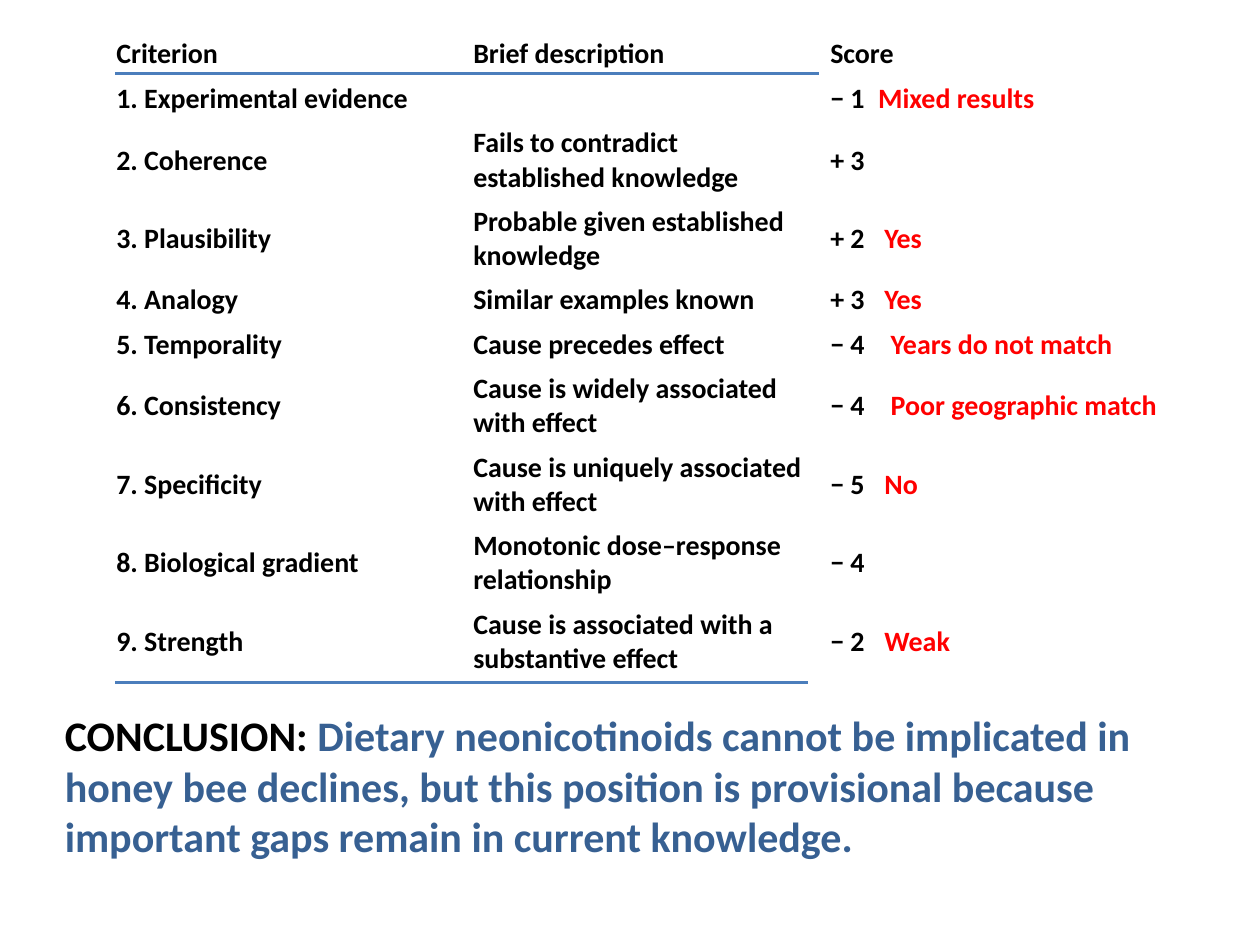
"""Build the scored criteria table with its conclusion."""
from typing import NamedTuple

from lxml import etree
from pptx import Presentation
from pptx import util as u
from pptx.dml.color import RGBColor
from pptx.enum import shapes, text
from pptx.oxml.ns import qn

BLACK = RGBColor(0x00, 0x00, 0x00)
RED = RGBColor(0xFF, 0x00, 0x00)
BLUE = RGBColor(0x37, 0x60, 0x92)
RULE = RGBColor(0x4B, 0x7E, 0xBC)
FONT = "Calibri"
GRID_COLS = 120
COL_SPAN = 34
ONE_LINE, TWO_LINES = u.Inches(0.34), u.Inches(0.6)


class Row(NamedTuple):
    name: str
    description: str
    score: str
    remark: str = ""
    tab: float = 0
    height: int = TWO_LINES


class Rule(NamedTuple):
    x1: int
    x2: int
    y: int
    width: float


ROWS = [
    Row("Criterion", "Brief description", "Score", height=ONE_LINE),
    Row("1. Experimental evidence", "", "− 1", "Mixed results", 0.38, ONE_LINE),
    Row("2. Coherence", "Fails to contradict established knowledge", "+ 3"),
    Row("3. Plausibility", "Probable given established knowledge", "+ 2", "Yes", 0.43),
    Row("4. Analogy", "Similar examples known", "+ 3", "Yes", 0.43, ONE_LINE),
    Row("5. Temporality", "Cause precedes effect", "− 4", "Years do not match", 0.48, ONE_LINE),
    Row("6. Consistency", "Cause is widely associated with effect", "− 4",
        "Poor geographic match", 0.48),
    Row("7. Specificity", "Cause is uniquely associated with effect", "− 5", "No", 0.43),
    Row("8. Biological gradient", "Monotonic dose–response relationship", "− 4"),
    Row("9. Strength", "Cause is associated with a substantive effect", "− 2", "Weak", 0.43),
]
RULES = [Rule(11, 78, 7, 2), Rule(11, 77, 65, 1.5)]

prs = Presentation()
prs.slide_width, prs.slide_height = u.Inches(10), u.Inches(7.5)


def grid(n: float) -> int:
    """Return the length of n grid units."""
    return round(prs.slide_width * n / GRID_COLS)


def add_text(p, content: str, *, size: float = 16, color: RGBColor = BLACK, bold: bool = True) -> None:
    """Append a formatted run to a paragraph."""
    r = p.add_run()
    r.text = content
    r.font.name, r.font.size, r.font.bold = FONT, u.Pt(size), bold
    r.font.color.rgb = color


def add_tab(p, inches: float) -> None:
    """Set one left tab stop on a paragraph."""
    tabs = etree.SubElement(p._p.get_or_add_pPr(), qn("a:tabLst"))
    etree.SubElement(tabs, qn("a:tab"), pos=str(u.Inches(inches)), algn="l")


def add_criteria(s, rows: list[Row]) -> None:
    """Draw the criteria table."""
    height = sum(row.height for row in rows)
    table = s.shapes.add_table(len(rows), 3, grid(10), grid(3), grid(3 * COL_SPAN), height).table
    table.first_row = table.horz_banding = False
    for col in table.columns:
        col.width = grid(COL_SPAN)
    for line, row in zip(table.rows, rows):
        line.height = row.height
        for cell, content in zip(line.cells, row[:3]):
            cell.fill.background()
            cell.vertical_anchor = text.MSO_ANCHOR.MIDDLE
            cell.margin_left = cell.margin_right = u.Inches(0.09)
            cell.margin_top = cell.margin_bottom = u.Inches(0.04)
            add_text(cell.text_frame.paragraphs[0], content)
        if row.remark:
            p = line.cells[2].text_frame.paragraphs[0]
            add_tab(p, row.tab)
            add_text(p, "\t" + row.remark, color=RED)


def add_rule(s, rule: Rule) -> None:
    """Draw one horizontal rule."""
    sp = s.shapes.add_connector(shapes.MSO_CONNECTOR.STRAIGHT, grid(rule.x1), grid(rule.y),
                                grid(rule.x2), grid(rule.y))
    sp.line.color.rgb, sp.line.width = RULE, u.Pt(rule.width)
    etree.SubElement(sp._element.spPr, qn("a:effectLst"))


def add_conclusion(s) -> None:
    """Write the conclusion below the table."""
    tf = s.shapes.add_textbox(grid(5), grid(67), grid(107), u.Inches(1.31)).text_frame
    tf.word_wrap = True
    tf.auto_size = text.MSO_AUTO_SIZE.SHAPE_TO_FIT_TEXT
    p = tf.paragraphs[0]
    add_text(p, "CONCLUSION: ", size=24)
    add_text(p, "Dietary neonicotinoids cannot be implicated in honey bee declines, but this position "
                "is provisional because important gaps remain in current knowledge.",
             size=24, color=BLUE)


def main() -> None:
    """Build and save the slide."""
    s = prs.slides.add_slide(prs.slide_layouts[6])
    add_criteria(s, ROWS)
    add_conclusion(s)
    for rule in RULES:
        add_rule(s, rule)
    prs.save("out.pptx")


if __name__ == "__main__":
    main()
